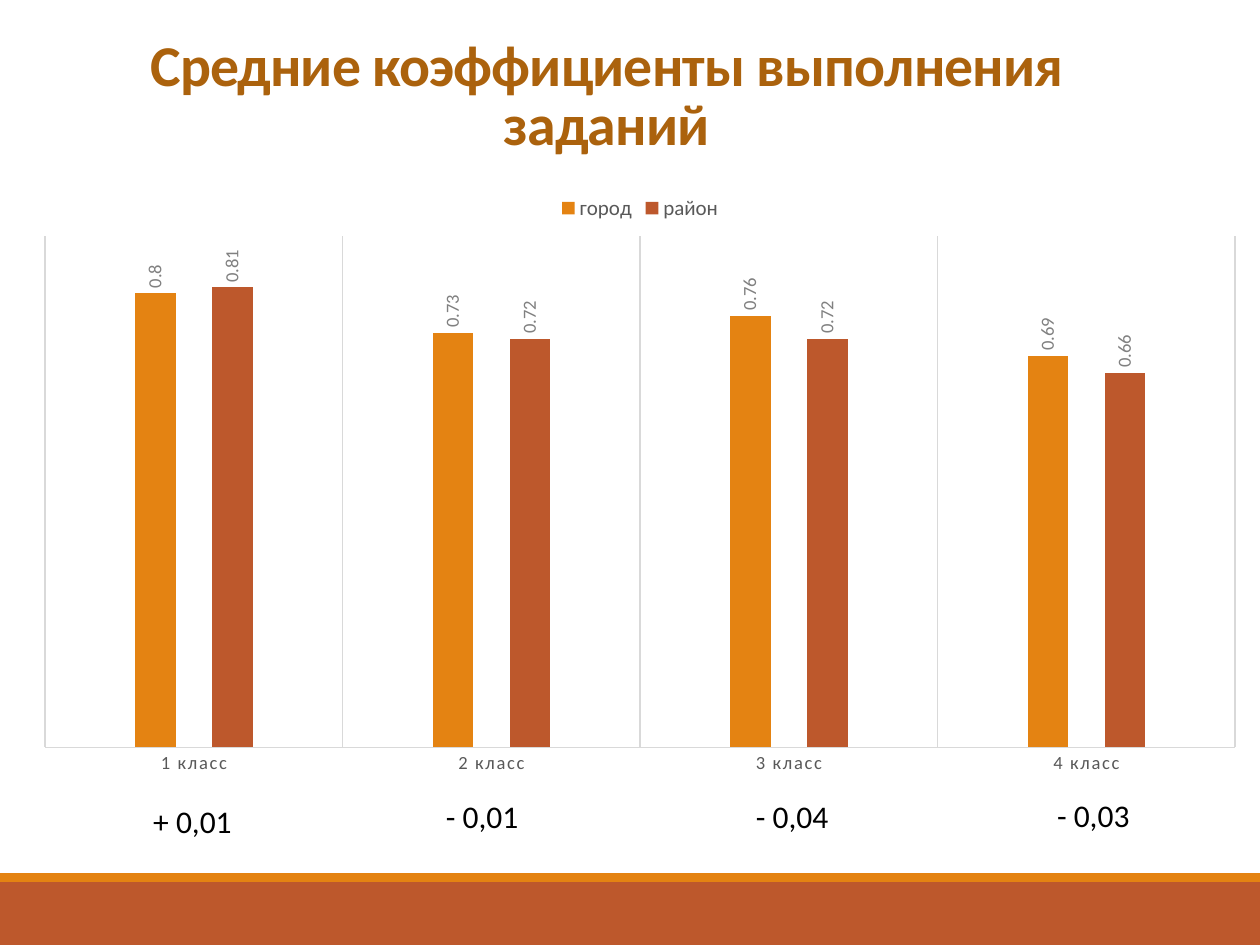
from lxml import etree
from pptx import Presentation
from pptx import util as u
from pptx.chart import data
from pptx.dml import color
from pptx.enum import chart as ce
from pptx.enum import shapes, text
from pptx.oxml import parse_xml
from pptx.oxml import ns

ORANGE, BRICK, GRID, GREY = "E48312", "BD582C", "D9D9D9", "595959"


def rgb(value):
    return color.RGBColor.from_string(value)


def style_font(font, size, value):
    font.name = "Calibri"
    font.size = u.Pt(size)
    font.color.rgb = rgb(value)


presentation = Presentation()
presentation.slide_width = u.Cm(25.4)
presentation.slide_height = u.Cm(19.05)
slide = presentation.slides.add_slide(presentation.slide_layouts[6])

for top, height, fill in [(17.78, 1.27, BRICK), (17.6, 0.18, ORANGE)]:
    band = slide.shapes.add_shape(
        shapes.MSO_SHAPE.RECTANGLE, 0, u.Cm(top), presentation.slide_width, u.Cm(height))
    band.shadow.inherit = False
    band.fill.solid()
    band.fill.fore_color.rgb = rgb(fill)
    band.line.fill.background()

title = slide.shapes.add_textbox(u.Cm(1.75), u.Cm(0.28), u.Cm(20.96), u.Cm(3.02))
title.text_frame.word_wrap = True
title.text_frame.vertical_anchor = text.MSO_ANCHOR.BOTTOM
title.text_frame.text = "Средние коэффициенты выполнения заданий"
paragraph = title.text_frame.paragraphs[0]
paragraph.alignment = text.PP_ALIGN.CENTER
paragraph.line_spacing = 0.85
run = paragraph.runs[0]
style_font(run.font, 33, "AB620D")
run.font.bold = True
run.font._element.set("spc", "-50")

chart_data = data.CategoryChartData()
chart_data.categories = [f"{grade} класс" for grade in range(1, 5)]
chart_data.add_series("город", (0.8, 0.73, 0.76, 0.69))
chart_data.add_series("район", (0.81, 0.72, 0.72, 0.66))
chart = slide.shapes.add_chart(
    ce.XL_CHART_TYPE.COLUMN_CLUSTERED,
    u.Cm(0.41), u.Cm(3.66), u.Cm(24.99), u.Cm(12.27), chart_data).chart
style_font(chart.font, 10, "000000")
chart.has_title = False
chart.has_legend = True
chart.legend.position = ce.XL_LEGEND_POSITION.TOP
chart.legend.include_in_layout = False
style_font(chart.legend.font, 12, GREY)

value_axis = chart.value_axis
value_axis.minimum_scale = 0
value_axis.maximum_scale = 0.9
value_axis.has_major_gridlines = False
value_axis.visible = False

category_axis = chart.category_axis
category_axis.major_tick_mark = ce.XL_TICK_MARK.NONE
category_axis.has_major_gridlines = True
for line in (category_axis.format.line, category_axis.major_gridlines.format.line):
    line.color.rgb = rgb(GRID)
    line.width = u.Pt(0.75)
style_font(category_axis.tick_labels.font, 10.6, GREY)
category_axis.tick_labels.font._element.set("spc", "100")

plot = chart.plots[0]
plot.gap_width = 444
plot.overlap = -90
plot.vary_by_categories = False
for series, fill in zip(plot.series, (ORANGE, BRICK)):
    series.format.fill.solid()
    series.format.fill.fore_color.rgb = rgb(fill)
    labels = series.data_labels
    labels.show_value = True
    labels.position = ce.XL_LABEL_POSITION.OUTSIDE_END
    style_font(labels.font, 10.6, "808080")
    body = labels._element.find(ns.qn("c:txPr")).find(ns.qn("a:bodyPr"))
    body.set("rot", "-5400000")
    body.set("vert", "horz")

plot_area = chart._chartSpace.chart.plotArea
for layout in plot_area.findall(ns.qn("c:layout")):
    plot_area.remove(layout)
layout = parse_xml(f"<c:layout {ns.nsdecls('c')}><c:manualLayout/></c:layout>")
for tag, value in [("layoutTarget", "inner"), ("xMode", "edge"), ("yMode", "edge"),
                   ("x", "0.02"), ("y", "0.09"), ("w", "0.96"), ("h", "0.84")]:
    etree.SubElement(layout[0], ns.qn(f"c:{tag}")).set("val", value)
plot_area.insert(0, layout)

differences = [("+ 0,01", 2.84, 16.05, 2.11), ("- 0,01", 8.74, 15.95, 1.98),
               ("- 0,04", 14.99, 15.95, 1.98), ("- 0,03", 21.06, 15.93, 1.98)]
for wording, left, top, width in differences:
    difference = slide.shapes.add_textbox(u.Cm(left), u.Cm(top), u.Cm(width), u.Cm(1.02))
    difference.text_frame.word_wrap = False
    difference.text_frame.auto_size = text.MSO_AUTO_SIZE.SHAPE_TO_FIT_TEXT
    difference.text_frame.text = wording
    style_font(difference.text_frame.paragraphs[0].runs[0].font, 18, "000000")

presentation.save("out.pptx")
